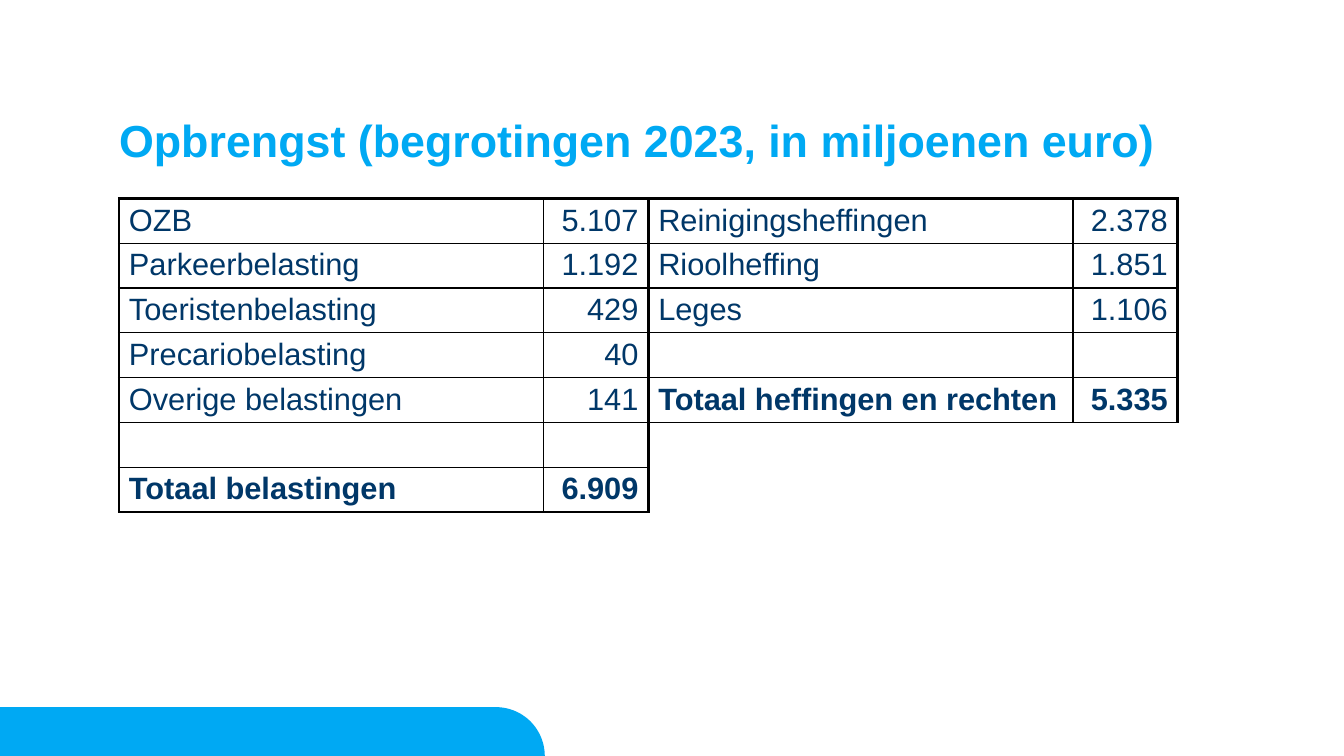
import math
from dataclasses import dataclass

from lxml import etree
from pptx import Presentation
from pptx.dml.color import RGBColor
from pptx.enum import text
from pptx.oxml import ns
from pptx.util import Cm, Pt


@dataclass(frozen=True)
class Theme:
    font: str = "Arial"
    accent: RGBColor = RGBColor(0x00, 0xA9, 0xF3)
    ink: RGBColor = RGBColor(0x00, 0x37, 0x68)
    paper: RGBColor = RGBColor(0xFF, 0xFF, 0xFF)
    rule: RGBColor = RGBColor(0, 0, 0)
    title_size: int = 32
    table_size: int = 22
    thin: int = 1
    thick: int = 2


THEME = Theme()
TAXES = [("OZB", "5.107"), ("Parkeerbelasting", "1.192"),
         ("Toeristenbelasting", "429"), ("Precariobelasting", "40"),
         ("Overige belastingen", "141"), ("", ""),
         ("Totaal belastingen", "6.909")]
LEVIES = [("Reinigingsheffingen", "2.378"), ("Rioolheffing", "1.851"),
          ("Leges", "1.106"), ("", ""),
          ("Totaal heffingen en rechten", "5.335")]


def apply(target, values):
    for name, value in values.items():
        setattr(target, name, value)


def style_font(font, size, color, bold):
    apply(font, dict(name=THEME.font, size=Pt(size), bold=bold))
    font.color.rgb = color


def add_title(page, wording, left, top, width, height):
    title = page.shapes.title
    apply(title, dict(left=Cm(left), top=Cm(top), width=Cm(width), height=Cm(height)))
    frame = title.text_frame
    frame.text = wording
    apply(frame, dict(margin_left=0, margin_top=0, margin_right=0, margin_bottom=0,
                      word_wrap=True, auto_size=text.MSO_AUTO_SIZE.NONE,
                      vertical_anchor=text.MSO_ANCHOR.TOP))
    para = frame.paragraphs[0]
    apply(para, dict(alignment=text.PP_ALIGN.LEFT, line_spacing=0.9))
    style_font(para.runs[0].font, THEME.title_size, THEME.accent, True)


def add_footer_tab(page, left, top, width, height):
    """Draw a bar whose top right corner is a quarter circle of its full height."""
    center = left + width - height
    arc = [(Cm(center + height * math.sin(math.radians(angle))),
            Cm(top + height - height * math.cos(math.radians(angle))))
           for angle in range(0, 91, 3)]
    outline = page.shapes.build_freeform(Cm(left), Cm(top + height))
    outline.add_line_segments([(Cm(left), Cm(top)), *arc], close=True)
    tab = outline.convert_to_shape()
    tab.shadow.inherit = False
    tab.fill.solid()
    tab.fill.fore_color.rgb = THEME.accent
    tab.line.fill.background()


def set_borders(cell, widths):
    """Add cell borders; widths run left, right, top, bottom in points."""
    properties = cell._tc.get_or_add_tcPr()
    for side, width in zip("LRTB", widths):
        line = etree.SubElement(properties, ns.qn(f"a:ln{side}"), w=str(Pt(width)))
        fill = etree.SubElement(line, ns.qn("a:solidFill"))
        etree.SubElement(fill, ns.qn("a:srgbClr"), val=str(THEME.rule))


def fill_cell(cell, wording, alignment, bold):
    cell.fill.solid()
    cell.fill.fore_color.rgb = THEME.paper
    apply(cell, dict(margin_left=Cm(0.25), margin_right=Cm(0.25),
                     margin_top=Cm(0.12), margin_bottom=Cm(0.12),
                     vertical_anchor=text.MSO_ANCHOR.TOP))
    para = cell.text_frame.paragraphs[0]
    para.alignment = alignment
    if wording:
        span = para.add_run()
        span.text = wording
        style_font(span.font, THEME.table_size, THEME.ink, bold)


def add_revenue_table(page, entries, left, top, width, row_height, bottom):
    """Place label and amount columns, the last row being the bold total."""
    frame = page.shapes.add_table(len(entries), 2, Cm(left), Cm(top), Cm(width),
                                  Cm(row_height * len(entries)))
    table = frame.table
    apply(table, dict(first_row=False, horz_banding=False))
    amount_width = 2.64
    table.columns[0].width = Cm(width - amount_width)
    table.columns[1].width = Cm(amount_width)
    last = len(entries) - 1
    for row, (label, amount) in enumerate(entries):
        table.rows[row].height = Cm(row_height)
        upper = THEME.thick if row == 0 else THEME.thin
        lower = bottom if row == last else THEME.thin
        columns = ((label, text.PP_ALIGN.LEFT, (THEME.thick, THEME.thin)),
                   (amount, text.PP_ALIGN.RIGHT, (THEME.thin, THEME.thick)))
        for column, (wording, alignment, sides) in enumerate(columns):
            cell = table.cell(row, column)
            set_borders(cell, (*sides, upper, lower))
            fill_cell(cell, wording, alignment, row == last)


def build_revenue_page(deck):
    page = deck.slides.add_slide(deck.slide_layouts[5])
    left, table_top, table_width, row_height = 3, 5, 13.34, 1.13
    tab_width, tab_height = 7.47, 1.23
    for tab_left in (0, 6.26):
        add_footer_tab(page, tab_left, 19.05 - tab_height, tab_width, tab_height)
    add_title(page, "Opbrengst (begrotingen 2023, in miljoenen euro)",
              left, 3, 27.86, 2)
    tables = ((TAXES, THEME.thick), (LEVIES, THEME.thin))
    for index, (entries, bottom) in enumerate(tables):
        add_revenue_table(page, entries, left + index * table_width, table_top,
                          table_width, row_height, bottom)


def main():
    deck = Presentation()
    apply(deck, dict(slide_width=Cm(33.87), slide_height=Cm(19.05)))
    build_revenue_page(deck)
    deck.save("out.pptx")


if __name__ == "__main__":
    main()
